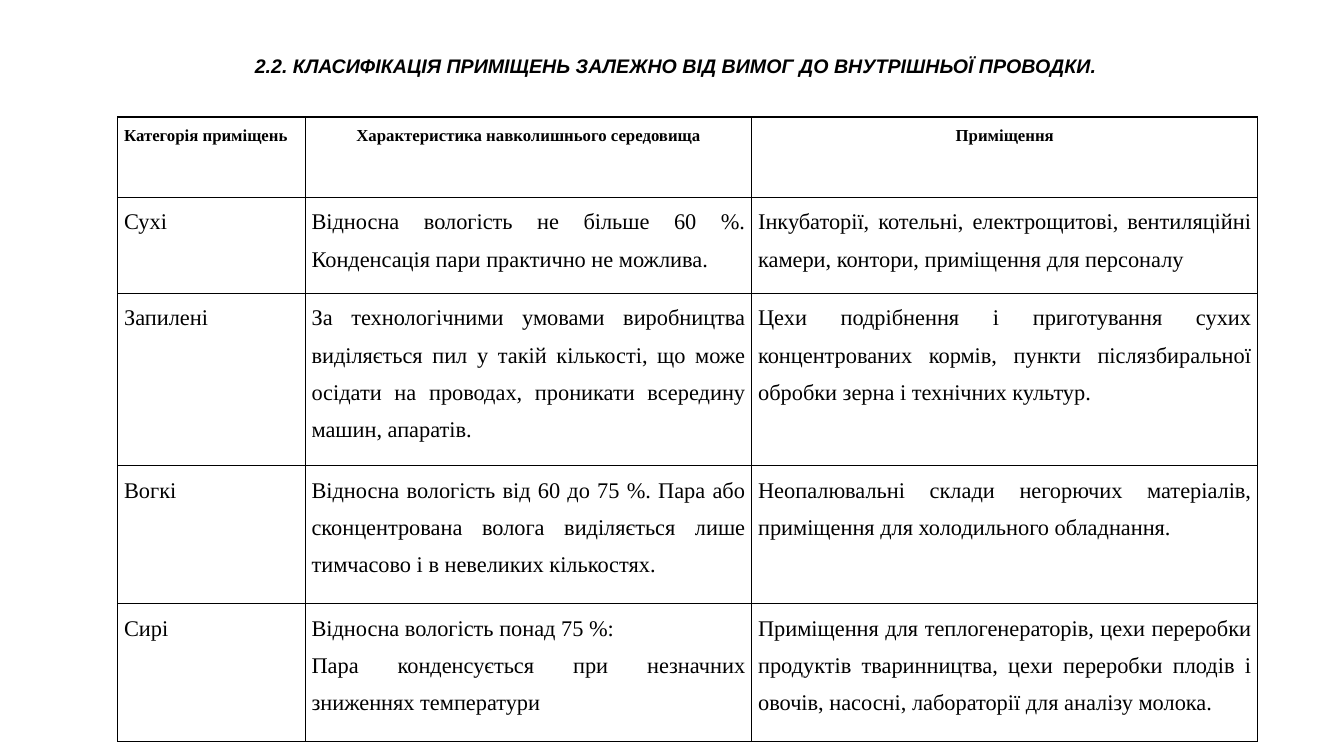
"""Build a slide with a table classifying rooms by wiring requirements."""
from lxml import etree
from pptx import Presentation
from pptx.dml.color import RGBColor
from pptx.enum.text import MSO_ANCHOR, PP_ALIGN
from pptx.oxml.ns import qn
from pptx.util import Pt

LEFT, CENTER, JUSTIFY = PP_ALIGN.LEFT, PP_ALIGN.CENTER, PP_ALIGN.JUSTIFY
TOP = MSO_ANCHOR.TOP
COLORS = {"ink": "000000"}
COLUMN_WIDTHS = [133.9, 319, 361.4]
ROW_HEIGHTS = [57.6, 68.4, 123.1, 98.6, 98.6]
ROWS = [
    ["Категорія приміщень", "Характеристика навколишнього середовища", "Приміщення"],
    ["Сухі",
     "Відносна вологість не більше 60 %. Конденсація пари практично не можлива.",
     "Інкубаторії, котельні, електрощитові, вентиляційні камери, контори, "
     "приміщення для персоналу"],
    ["Запилені",
     "За технологічними умовами виробництва виділяється пил у такій кількості, "
     "що може осідати на проводах, проникати всередину машин, апаратів.",
     "Цехи подрібнення і приготування сухих концентрованих кормів, "
     "пункти післязбиральної обробки зерна і технічних культур."],
    ["Вогкі",
     "Відносна вологість від 60 до 75 %. Пара або сконцентрована волога "
     "виділяється лише тимчасово і в невеликих кількостях.",
     "Неопалювальні склади негорючих матеріалів, приміщення для холодильного обладнання."],
    ["Сирі",
     "Відносна вологість понад 75 %:\n"
     "Пара конденсується при незначних зниженнях температури",
     "Приміщення для теплогенераторів, цехи переробки продуктів тваринництва, "
     "цехи переробки плодів і овочів, насосні, лабораторії для аналізу молока."],
]


def write(frame, text, font, size, align, bold=False, italic=False, spacing=1.0):
    """Fill a text frame, one paragraph for each line of text."""
    frame.text = text
    for para in frame.paragraphs:
        para.alignment = align
        para.line_spacing = spacing
        for span in para.runs:
            span.font.name = font
            span.font.size = Pt(size)
            span.font.bold = bold
            span.font.italic = italic
            span.font.color.rgb = RGBColor.from_string(COLORS["ink"])


def add_borders(cell):
    """Draw a thin line on all four sides of a cell."""
    properties = cell._tc.get_or_add_tcPr()
    for side in ("a:lnL", "a:lnR", "a:lnT", "a:lnB"):
        line = etree.SubElement(properties, qn(side), w=str(Pt(1)))
        fill = etree.SubElement(line, qn("a:solidFill"))
        etree.SubElement(fill, qn("a:srgbClr"), val=COLORS["ink"])


deck = Presentation()
deck.slide_width, deck.slide_height = Pt(960), Pt(540)
page = deck.slides.add_slide(deck.slide_layouts[6])

table = page.shapes.add_table(
    len(ROWS), len(COLUMN_WIDTHS), Pt(84.2), Pt(83.5),
    Pt(sum(COLUMN_WIDTHS)), Pt(sum(ROW_HEIGHTS))).table
table.first_row = table.horz_banding = False
for column, width in zip(table.columns, COLUMN_WIDTHS):
    column.width = Pt(width)
for row, height in zip(table.rows, ROW_HEIGHTS):
    row.height = Pt(height)

for row_index, texts in enumerate(ROWS):
    header = row_index == 0
    for column_index, text in enumerate(texts):
        cell = table.cell(row_index, column_index)
        cell.margin_left = cell.margin_right = Pt(4.5)
        cell.margin_top = cell.margin_bottom = Pt(0)
        cell.vertical_anchor = TOP
        write(cell.text_frame, text, font="Times New Roman",
              size=12 if header else 16, bold=header, spacing=1.5,
              align=CENTER if header and column_index > 0 else JUSTIFY)
        add_borders(cell)
        cell.fill.background()

title = page.shapes.add_textbox(Pt(182), Pt(38.5), Pt(640), Pt(17)).text_frame
title.word_wrap = True
title.vertical_anchor = TOP
title.margin_left = title.margin_right = title.margin_top = title.margin_bottom = Pt(0)
write(title, "2.2. КЛАСИФІКАЦІЯ ПРИМІЩЕНЬ ЗАЛЕЖНО ВІД ВИМОГ ДО ВНУТРІШНЬОЇ ПРОВОДКИ.",
      font="Arial", size=14, align=LEFT, bold=True, italic=True)

deck.save("out.pptx")
